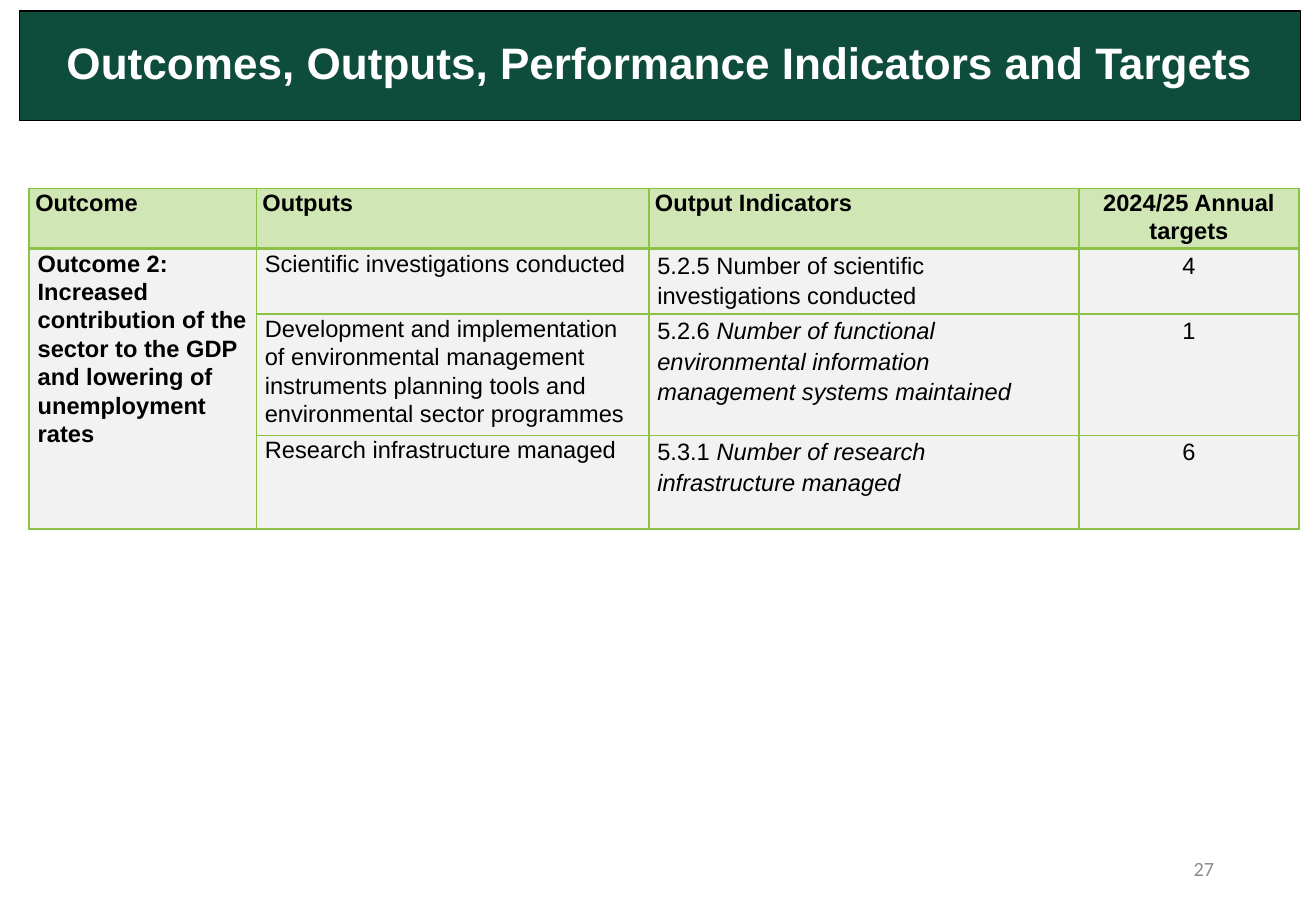
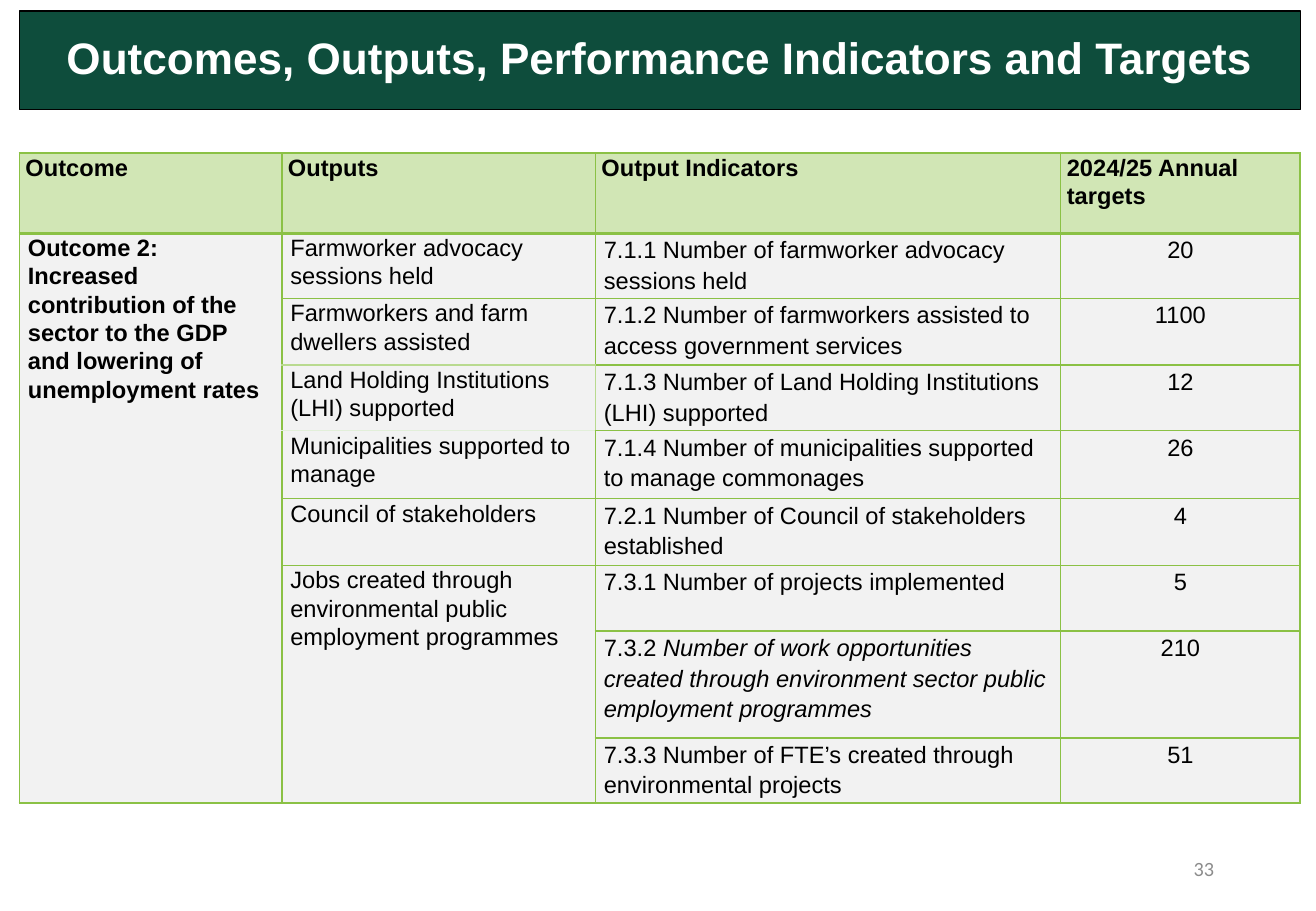
from lxml.etree import SubElement
from pptx import Presentation
from pptx.dml.color import RGBColor
from pptx.enum.text import MSO_ANCHOR, MSO_AUTO_SIZE, PP_ALIGN
from pptx.oxml.ns import qn
from pptx.util import Inches, Pt

COLORS = {"band": "0E4D3C", "white": "FFFFFF", "black": "000000", "number": "8C8C8C",
          "header": "D1E6B5", "body": "F2F2F2", "border": "8BC145",
          "soft": "B9DA8F", "pale": "E2EFD9"}
TITLE = "Outcomes, Outputs, Performance Indicators and Targets"
HEADERS = ["Outcome", "Outputs", "Output Indicators", "2024/25 Annual targets"]
OUTCOME = ("Outcome 2: Increased contribution of the sector to the GDP "
           "and lowering of unemployment rates")

# Rows: output (None continues the one above), indicator code, indicator, italic, target
SLIDES = [
    {
        "number": "27", "band_height": 0.9, "target_align": PP_ALIGN.CENTER,
        "at": (0.24, 1.55), "cols": [1.87, 3.23, 3.54, 1.81],
        "heights": [0.49, 0.42, 0.86, 0.77], "borders": {},
        "rows": [
            ("Scientific investigations conducted", "5.2.5",
             "Number of scientific investigations conducted", False, "4"),
            ("Development and implementation of environmental management instruments "
             "planning tools and environmental sector programmes", "5.2.6",
             "Number of functional environmental information management systems maintained",
             True, "1"),
            ("Research infrastructure managed", "5.3.1",
             "Number of research infrastructure managed", True, "6"),
        ],
    },
    {
        "number": "33", "band_height": 0.81, "target_align": PP_ALIGN.LEFT,
        "at": (0.16, 1.26), "cols": [2.16, 2.58, 3.83, 1.97],
        "heights": [0.66, 0.52, 0.55, 0.54, 0.56, 0.55, 0.54, 0.88, 0.53],
        "borders": {(2, 1): {"B": "soft"}, (3, 1): {"T": "soft", "R": "soft", "B": "pale"},
                    (3, 2): {"L": "soft"}, (4, 1): {"T": "pale"}},
        "rows": [
            ("Farmworker advocacy sessions held", "7.1.1",
             "Number of farmworker advocacy sessions held", False, "20"),
            ("Farmworkers and farm dwellers assisted", "7.1.2",
             "Number of farmworkers assisted to access government services", False, "1100"),
            ("Land Holding Institutions (LHI) supported", "7.1.3",
             "Number of Land Holding Institutions (LHI) supported", False, "12"),
            ("Municipalities supported to manage", "7.1.4",
             "Number of municipalities supported to manage commonages", False, "26"),
            ("Council of stakeholders", "7.2.1",
             "Number of Council of stakeholders established", False, "4"),
            ("Jobs created through environmental public employment programmes", "7.3.1",
             "Number of projects implemented", False, "5"),
            (None, "7.3.2", "Number of work opportunities created through environment "
             "sector public employment programmes", True, "210"),
            (None, "7.3.3", "Number of FTE’s created through environmental projects",
             False, "51"),
        ],
    },
]


def rgb(name):
    return RGBColor.from_string(COLORS[name])


def style_run(r, size, color, bold=False, italic=False, name="Arial"):
    r.font.name, r.font.size = name, Pt(size)
    r.font.bold, r.font.italic = bold, italic
    r.font.color.rgb = rgb(color)


def add_title(s, height):
    sp = s.shapes.title
    sp.left, sp.top, sp.width, sp.height = map(Inches, (0.16, 0.09, 10.54, height))
    sp.fill.solid()
    sp.fill.fore_color.rgb = rgb("band")
    sp.line.color.rgb = rgb("black")
    sp.line.width = Pt(0.75)
    tf = sp.text_frame
    tf.text = TITLE
    tf.auto_size = MSO_AUTO_SIZE.NONE
    tf.vertical_anchor = MSO_ANCHOR.MIDDLE
    p = tf.paragraphs[0]
    p.alignment, p.line_spacing = PP_ALIGN.CENTER, 0.9
    style_run(p.runs[0], 26.1, "white", bold=True)


def add_number(s, number):
    tf = s.shapes.add_textbox(*map(Inches, (7.65, 6.95, 2.44, 0.4))).text_frame
    tf.word_wrap = True
    tf.vertical_anchor = MSO_ANCHOR.MIDDLE
    tf.text = number
    p = tf.paragraphs[0]
    p.alignment = PP_ALIGN.RIGHT
    style_run(p.runs[0], 12, "number", name="Calibri")


def format_cell(cell, row, colors):
    tcPr = cell._tc.get_or_add_tcPr()
    for side in "LRTB":
        heavy = (row, side) in ((0, "B"), (1, "T"))
        ln = SubElement(tcPr, qn(f"a:ln{side}"), w=str(Pt(2 if heavy else 1)))
        fill = SubElement(ln, qn("a:solidFill"))
        SubElement(fill, qn("a:srgbClr"), val=COLORS[colors.get(side, "border")])
    cell.fill.solid()
    cell.fill.fore_color.rgb = rgb("body" if row else "header")
    cell.margin_left = cell.margin_right = Inches(0.07 if row else 0.05)
    cell.margin_top = cell.margin_bottom = 0


def write_cell(cell, runs, bold=False, align=PP_ALIGN.LEFT, spacing=1.07):
    p = cell.text_frame.paragraphs[0]
    p.alignment, p.line_spacing, p.space_after = align, spacing, Pt(8)
    for text, italic in runs:
        r = p.add_run()
        r.text = text
        style_run(r, 14, "black", bold, italic)


def add_outputs_table(s, spec_):
    cols, heights, rows = spec_["cols"], spec_["heights"], spec_["rows"]
    size = (sum(cols), sum(heights))
    table = s.shapes.add_table(len(heights), len(cols),
                               *map(Inches, spec_["at"] + size)).table
    table.horz_banding = False
    for col, width in zip(table.columns, cols):
        col.width = Inches(width)
    for i, height in enumerate(heights):
        table.rows[i].height = Inches(height)
        for j in range(len(cols)):
            format_cell(table.cell(i, j), i, spec_["borders"].get((i, j), {}))

    for j, header in enumerate(HEADERS):
        align = spec_["target_align"] if j == len(HEADERS) - 1 else PP_ALIGN.LEFT
        write_cell(table.cell(0, j), [(header, False)], bold=True, align=align)
    write_cell(table.cell(1, 0), [(OUTCOME, False)], bold=True)
    table.cell(1, 0).merge(table.cell(len(rows), 0))

    starts = [i for i, row in enumerate(rows, 1) if row[0]]
    for start, end in zip(starts, starts[1:] + [len(rows) + 1]):
        if end - start > 1:
            table.cell(start, 1).merge(table.cell(end - 1, 1))
    for i, (output, code, indicator, italic, target) in enumerate(rows, 1):
        if output:
            write_cell(table.cell(i, 1), [(output, False)])
        write_cell(table.cell(i, 2), [(code + " ", False), (indicator, italic)], spacing=1.15)
        write_cell(table.cell(i, 3), [(target, False)], align=PP_ALIGN.CENTER, spacing=1.15)


def main():
    prs = Presentation()
    prs.slide_width, prs.slide_height = Inches(10.83), Inches(7.5)
    for content in SLIDES:
        s = prs.slides.add_slide(prs.slide_layouts[5])
        add_title(s, content["band_height"])
        add_number(s, content["number"])
        add_outputs_table(s, content)
    prs.save("out.pptx")


if __name__ == "__main__":
    main()
